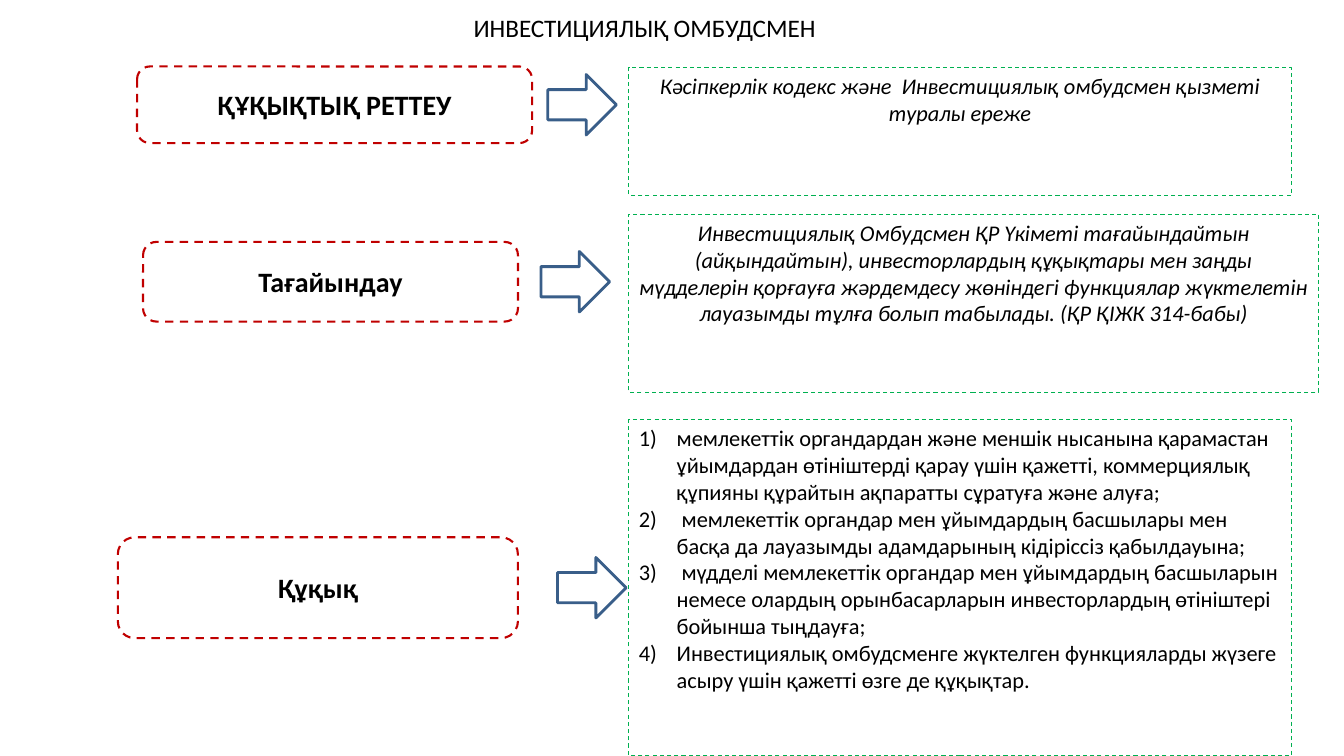
"""Build the slide on the investment ombudsman: topics, arrows and explanations."""
from lxml.etree import SubElement
from pptx import Presentation
from pptx.dml.color import RGBColor
from pptx.enum.dml import MSO_LINE
from pptx.enum.shapes import MSO_SHAPE
from pptx.enum.text import MSO_ANCHOR, MSO_AUTO_SIZE, PP_ALIGN
from pptx.oxml.ns import qn
from pptx.util import Pt

COLORS = {"text": "000000", "topic": "C00000", "arrow": "395E89", "detail": "00B050"}
FONT = "Calibri"
TITLE = "ИНВЕСТИЦИЯЛЫҚ ОМБУДСМЕН"
DETAIL_LEFT = 449.3
ARROW_WIDTH, ARROW_HEIGHT = 49, 43.2
NUMBER_INDENT = 27

ROWS = [
    {
        "topic": "ҚҰҚЫҚТЫҚ РЕТТЕУ",
        "topic_place": (97.9, 47.5, 282.2, 54.7),
        "arrow_left": 391.3,
        "detail_place": (48.2, 473, 91.4),
        "details": ["Кәсіпкерлік кодекс және  Инвестициялық омбудсмен қызметі туралы ереже"],
    },
    {
        "topic": "Тағайындау",
        "topic_place": (102.2, 172.8, 267.8, 56.9),
        "arrow_left": 386.4,
        "detail_place": (152.9, 492.5, 127.4),
        "details": [
            "Инвестициялық Омбудсмен ҚР Үкіметі тағайындайтын (айқындайтын), "
            "инвесторлардың құқықтары мен заңды мүдделерін қорғауға жәрдемдесу "
            "жөніндегі функциялар жүктелетін лауазымды тұлға болып табылады. "
            "(ҚР ҚІЖК 314-бабы)"
        ],
    },
    {
        "topic": "Құқық",
        "topic_place": (84.2, 383.8, 285.8, 72),
        "arrow_left": 398.2,
        "detail_place": (299.5, 473, 240.5),
        "details": [
            "мемлекеттік органдардан және меншік нысанына қарамастан ұйымдардан "
            "өтініштерді қарау үшін қажетті, коммерциялық құпияны құрайтын "
            "ақпаратты сұратуға және алуға;",
            " мемлекеттік органдар мен ұйымдардың басшылары мен басқа да "
            "лауазымды адамдарының кідіріссіз қабылдауына;",
            " мүдделі мемлекеттік органдар мен ұйымдардың басшыларын немесе "
            "олардың орынбасарларын инвесторлардың өтініштері бойынша тыңдауға;",
            "Инвестициялық омбудсменге жүктелген функцияларды жүзеге асыру үшін "
            "қажетті өзге де құқықтар.",
        ],
    },
]


def add_outline(page, kind, place, color, width, dashed=True):
    """Add an unfilled preset shape with a coloured outline."""
    shape = page.shapes.add_shape(kind, *map(Pt, place))
    shape.shadow.inherit = False
    shape.fill.background()
    shape.line.color.rgb = RGBColor.from_string(COLORS[color])
    shape.line.width = Pt(width)
    if dashed:
        shape.line.dash_style = MSO_LINE.DASH
    return shape


def write(box, lines, size, anchor, align=PP_ALIGN.CENTER, bold=False, italic=False):
    """Fill a shape with paragraphs and format their runs."""
    frame = box.text_frame
    frame.text = "\n".join(lines)
    frame.word_wrap = True
    frame.vertical_anchor = anchor
    for para in frame.paragraphs:
        para.alignment = align
        for span in para.runs:
            span.font.name = FONT
            span.font.size = Pt(size)
            span.font.bold = bold
            span.font.italic = italic
            span.font.color.rgb = RGBColor.from_string(COLORS["text"])


def number(para):
    """Give a paragraph a hanging automatic number such as 1)."""
    properties = para._p.get_or_add_pPr()
    properties.set("marL", str(Pt(NUMBER_INDENT)))
    properties.set("indent", str(-Pt(NUMBER_INDENT)))
    SubElement(properties, qn("a:buFont"), typeface="+mj-lt")
    SubElement(properties, qn("a:buAutoNum"), type="arabicParenR")


def add_row(page, row):
    """Add one topic with its arrow and its explanation."""
    topic = add_outline(page, MSO_SHAPE.ROUNDED_RECTANGLE, row["topic_place"], "topic", 1.5)
    write(topic, [row["topic"]], 20, MSO_ANCHOR.MIDDLE, bold=True)

    _, top, _, height = row["topic_place"]
    arrow_top = top + (height - ARROW_HEIGHT) / 2
    arrow_place = (row["arrow_left"], arrow_top, ARROW_WIDTH, ARROW_HEIGHT)
    add_outline(page, MSO_SHAPE.RIGHT_ARROW, arrow_place, "arrow", 2, dashed=False)

    detail_top, width, height = row["detail_place"]
    detail_place = (DETAIL_LEFT, detail_top, width, height)
    detail = add_outline(page, MSO_SHAPE.RECTANGLE, detail_place, "detail", 0.75)
    numbered = len(row["details"]) > 1
    align = PP_ALIGN.LEFT if numbered else PP_ALIGN.CENTER
    write(detail, row["details"], 16, MSO_ANCHOR.TOP, align, italic=not numbered)
    if numbered:
        for para in detail.text_frame.paragraphs:
            number(para)


def main():
    """Create the deck and save it."""
    deck = Presentation()
    deck.slide_width, deck.slide_height = Pt(960), Pt(540)
    page = deck.slides.add_slide(deck.slide_layouts[5])
    title = page.shapes.title
    title.left, title.top, title.width, title.height = map(Pt, (329.8, 5, 261.4, 28.8))
    write(title, [TITLE], 18, MSO_ANCHOR.TOP)
    title.text_frame.word_wrap = False
    title.text_frame.auto_size = MSO_AUTO_SIZE.SHAPE_TO_FIT_TEXT
    for row in ROWS:
        add_row(page, row)
    deck.save("out.pptx")


if __name__ == "__main__":
    main()
